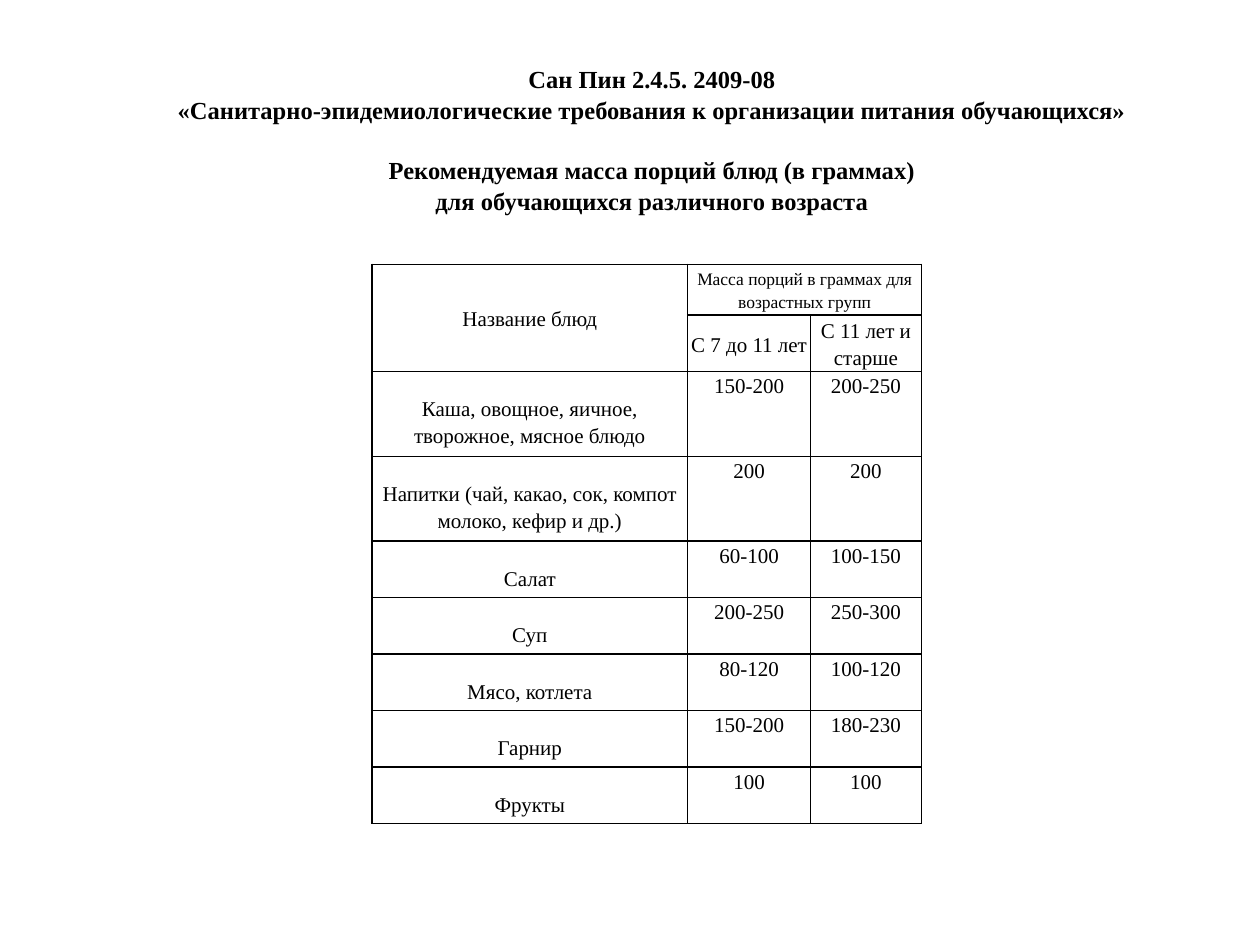
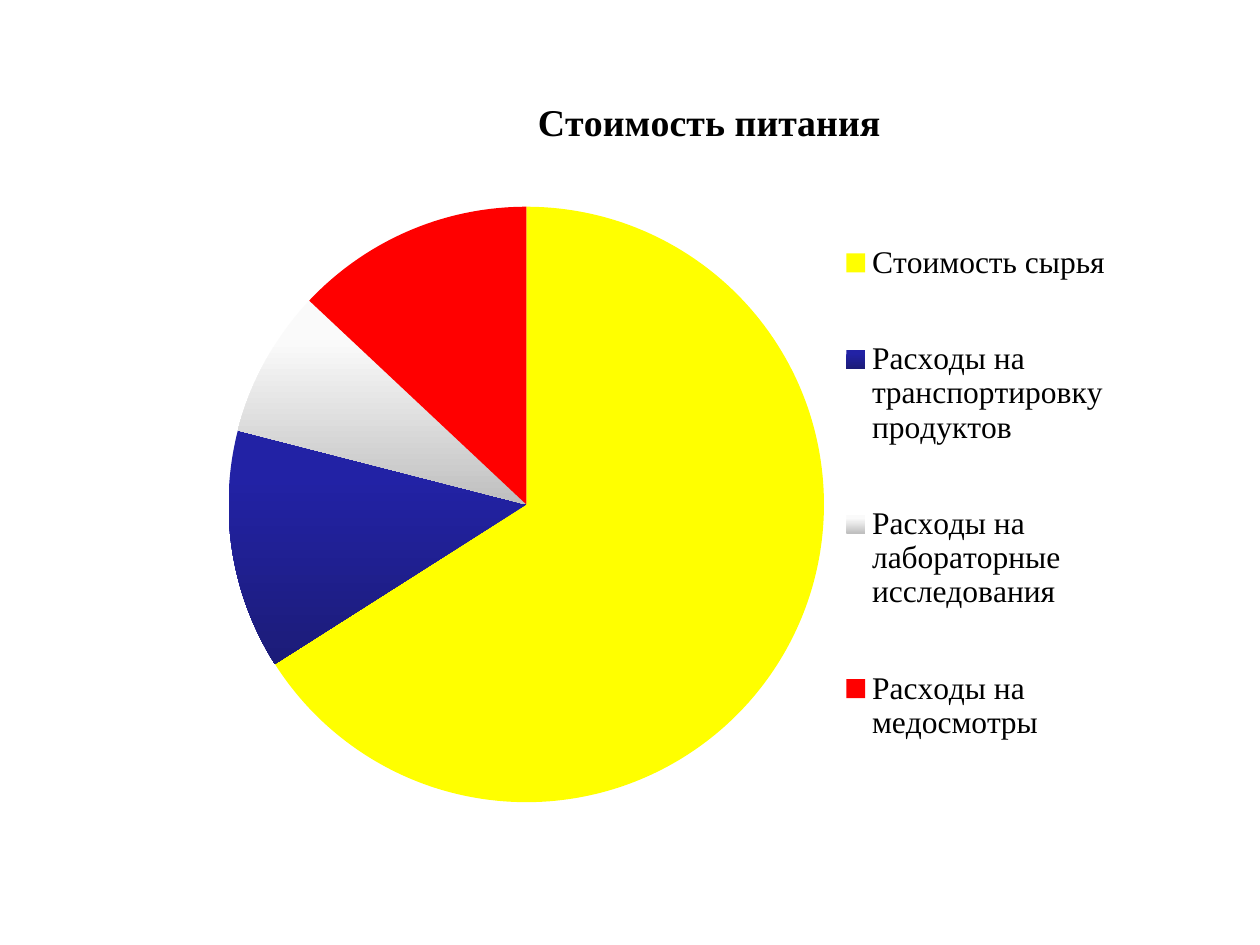
"""Build two slides on school meals: a portion table and a cost pie chart."""
from dataclasses import dataclass

from pptx import Presentation
from pptx.chart.data import CategoryChartData
from pptx.dml.color import RGBColor
from pptx.enum.chart import XL_CHART_TYPE, XL_LEGEND_POSITION
from pptx.enum.text import MSO_ANCHOR, MSO_AUTO_SIZE, PP_ALIGN
from pptx.oxml import parse_xml
from pptx.oxml.ns import nsdecls
from pptx.util import Pt


@dataclass(frozen=True)
class Theme:
    font: str = "Times New Roman"
    ink: str = "000000"
    title: float = 14
    cell: float = 12
    small: float = 10
    chart: float = 18
    chart_title: float = 21.6
    line: float = 1
    slices: tuple = (("FFFF00",), ("2222A5", "1C1C78"), ("FAFAFA", "BFBFBF"), ("FF0000",))


class Deck:
    def __init__(self, theme):
        self.theme = theme
        self.prs = Presentation()
        self.prs.slide_width, self.prs.slide_height = Pt(720), Pt(540)
        self.s = None

    def slide(self, layout):
        self.s = self.prs.slides.add_slide(self.prs.slide_layouts[layout])

    def style(self, font, size, bold=False):
        font.name, font.size, font.bold = self.theme.font, Pt(size), bold
        font.color.rgb = RGBColor.from_string(self.theme.ink)

    def title(self, box, groups, spacing):
        sp = self.s.shapes.title
        sp.left, sp.top, sp.width, sp.height = map(Pt, box)
        tf = sp.text_frame
        tf.word_wrap, tf.auto_size = True, MSO_AUTO_SIZE.NONE
        tf.vertical_anchor = MSO_ANCHOR.TOP
        tf.text = "\n".join(line for group in groups for line in group)
        for p in tf.paragraphs:
            p.alignment, p.line_spacing, p.space_before = PP_ALIGN.CENTER, spacing, Pt(0)
            self.style(p.font, self.theme.title, True)
        start = 0
        for group in groups[:-1]:
            start += len(group)
            tf.paragraphs[start].space_before = Pt(self.theme.title * 1.2)

    def borders(self, cell):
        tc_pr = cell._tc.get_or_add_tcPr()
        for side in "LRTB":
            tc_pr.append(parse_xml(
                f'<a:ln{side} {nsdecls("a")} w="{Pt(self.theme.line)}"><a:solidFill>'
                f'<a:srgbClr val="{self.theme.ink}"/></a:solidFill></a:ln{side}>'))

    def cell(self, cell, text, size, anchor, drop):
        self.borders(cell)
        cell.fill.background()
        cell.margin_left = cell.margin_right = Pt(1.2)
        cell.margin_top, cell.margin_bottom = Pt(drop), Pt(0)
        cell.vertical_anchor = anchor
        cell.text = text
        p = cell.text_frame.paragraphs[0]
        p.alignment, p.line_spacing = PP_ALIGN.CENTER, 1.15
        self.style(p.font, size)

    def table(self, left, top, widths, heights, rows, header_rows, merges, small, drop):
        table = self.s.shapes.add_table(
            len(rows), len(widths), Pt(left), Pt(top), Pt(sum(widths)), Pt(sum(heights))).table
        table.first_row = table.horz_banding = False
        for col, width in zip(table.columns, widths):
            col.width = Pt(width)
        for row, height in zip(table.rows, heights):
            row.height = Pt(height)
        for i, values in enumerate(rows):
            head = i < header_rows
            for j, text in enumerate(values):
                size = self.theme.small if (i, j) in small else self.theme.cell
                self.cell(table.cell(i, j), text, size,
                          MSO_ANCHOR.MIDDLE if head else MSO_ANCHOR.TOP,
                          drop if j == 0 and not head else 0)
        for start, end in merges:
            table.cell(*start).merge(table.cell(*end))

    def place(self, element, index, box, inner=False):
        for old in element.xpath("c:layout"):
            element.remove(old)
        target = '<c:layoutTarget val="inner"/>' if inner else ""
        modes = "".join(f'<c:{n}Mode val="edge"/>' for n in "xy")
        sizes = "".join(f'<c:{n} val="{v}"/>' for n, v in zip("xywh", box))
        element.insert(index, parse_xml(
            f'<c:layout {nsdecls("c")}><c:manualLayout>{target}{modes}{sizes}'
            '</c:manualLayout></c:layout>'))

    def paint(self, fill, colours):
        if len(colours) == 1:
            fill.solid()
            fill.fore_color.rgb = RGBColor.from_string(colours[0])
            return
        fill.gradient()
        fill.gradient_angle = 270
        for stop, colour in zip(fill.gradient_stops, colours):
            stop.color.rgb = RGBColor.from_string(colour)
        fill.gradient_stops[0].position = 0.2

    def pie(self, box, title, shares, title_at, plot_at, legend_at):
        data = CategoryChartData()
        data.categories = list(shares)
        data.add_series(title, list(shares.values()))
        chart = self.s.shapes.add_chart(XL_CHART_TYPE.PIE, *map(Pt, box), data).chart
        self.style(chart.font, self.theme.chart)
        chart.has_title = chart.has_legend = True
        tf = chart.chart_title.text_frame
        tf.text = title
        self.style(tf.paragraphs[0].font, self.theme.chart_title, True)
        chart.legend.position = XL_LEGEND_POSITION.RIGHT
        chart.legend.include_in_layout = False
        self.style(chart.legend.font, self.theme.chart)
        plot = chart.plots[0]
        plot.vary_by_categories = True
        for i, colours in enumerate(self.theme.slices):
            fmt = plot.series[0].points[i].format
            self.paint(fmt.fill, colours)
            fmt.line.fill.background()
        for tag, index, spot in (("title", 1, title_at), ("plotArea", 0, plot_at),
                                 ("legend", 1, legend_at)):
            self.place(chart.element.xpath(f"c:chart/c:{tag}")[0], index, spot,
                       tag == "plotArea")


def main():
    deck = Deck(Theme())

    deck.slide(5)
    deck.title((60, 32, 625, 109), (
        ("Сан Пин 2.4.5. 2409-08",
         "«Санитарно-эпидемиологические требования к организации питания обучающихся»"),
        ("Рекомендуемая масса порций блюд (в граммах)",
         "для обучающихся различного возраста")), 1.05)
    portions = [
        ("Название блюд", "Масса порций в граммах для возрастных групп", ""),
        ("", "С 7 до 11 лет", "С 11 лет и старше"),
        ("Каша, овощное, яичное, творожное, мясное блюдо", "150-200", "200-250"),
        ("Напитки (чай, какао, сок, компот молоко, кефир и др.)", "200", "200"),
        ("Салат", "60-100", "100-150"),
        ("Суп", "200-250", "250-300"),
        ("Мясо, котлета", "80-120", "100-120"),
        ("Гарнир", "150-200", "180-230"),
        ("Фрукты", "100", "100"),
    ]
    deck.table(212.5, 151, (180.5, 70.2, 63.3), [29, 32.3] + [48.5] * 2 + [32.3] * 5,
               portions, header_rows=2, merges=(((0, 0), (1, 0)), ((0, 1), (0, 2))),
               small={(0, 1), (0, 2)}, drop=13)

    deck.slide(6)
    deck.pie((120, 43, 524, 442), "Стоимость питания", {
        "Стоимость сырья": 66,
        "Расходы на транспортировку продуктов": 13,
        "Расходы на лабораторные исследования": 8,
        "Расходы на медосмотры": 13,
    }, title_at=(0.35, 0.02), plot_at=(0.02, 0.17, 0.65, 0.77),
        legend_at=(0.68, 0.14, 0.31, 0.8))

    deck.prs.save("out.pptx")


if __name__ == "__main__":
    main()
